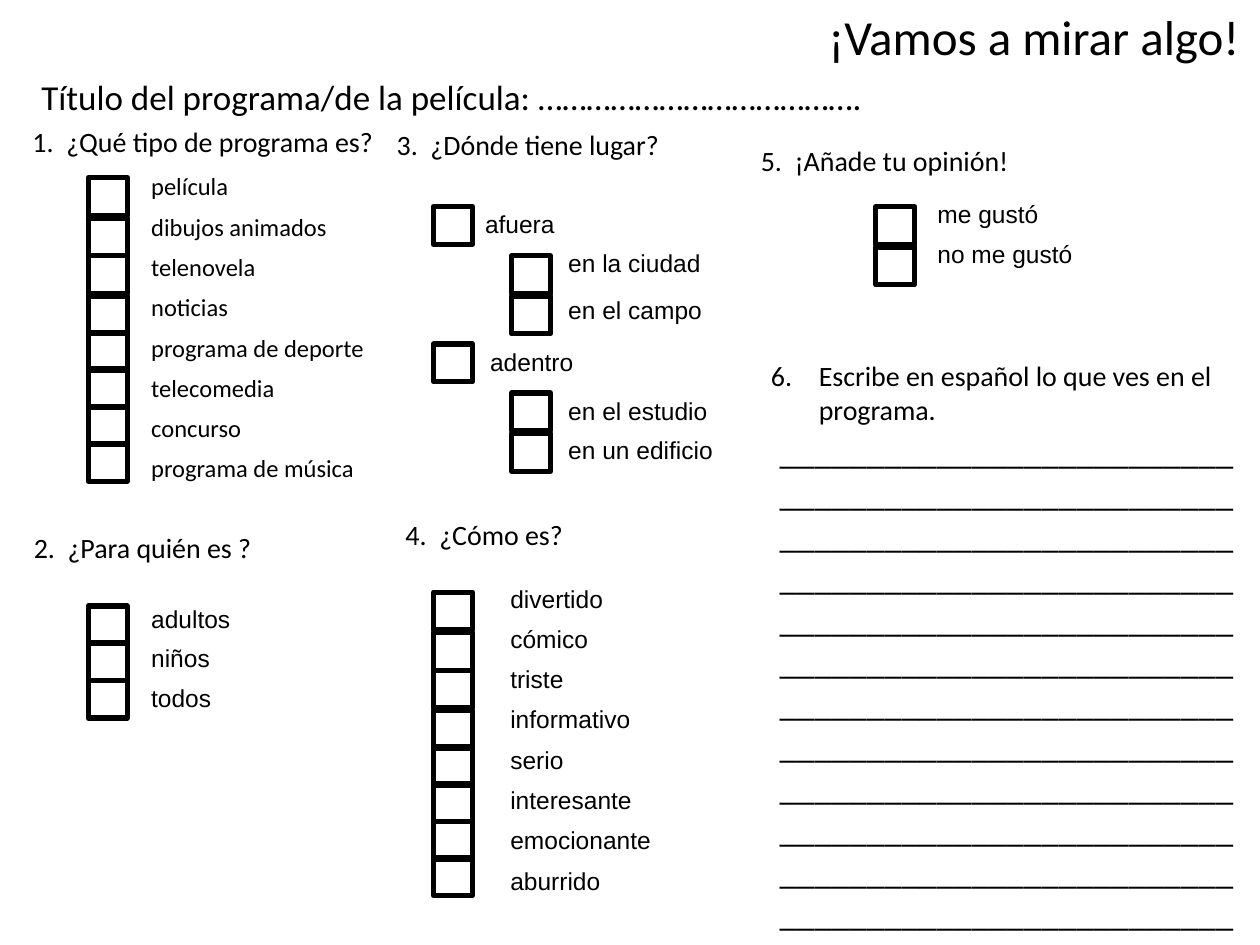
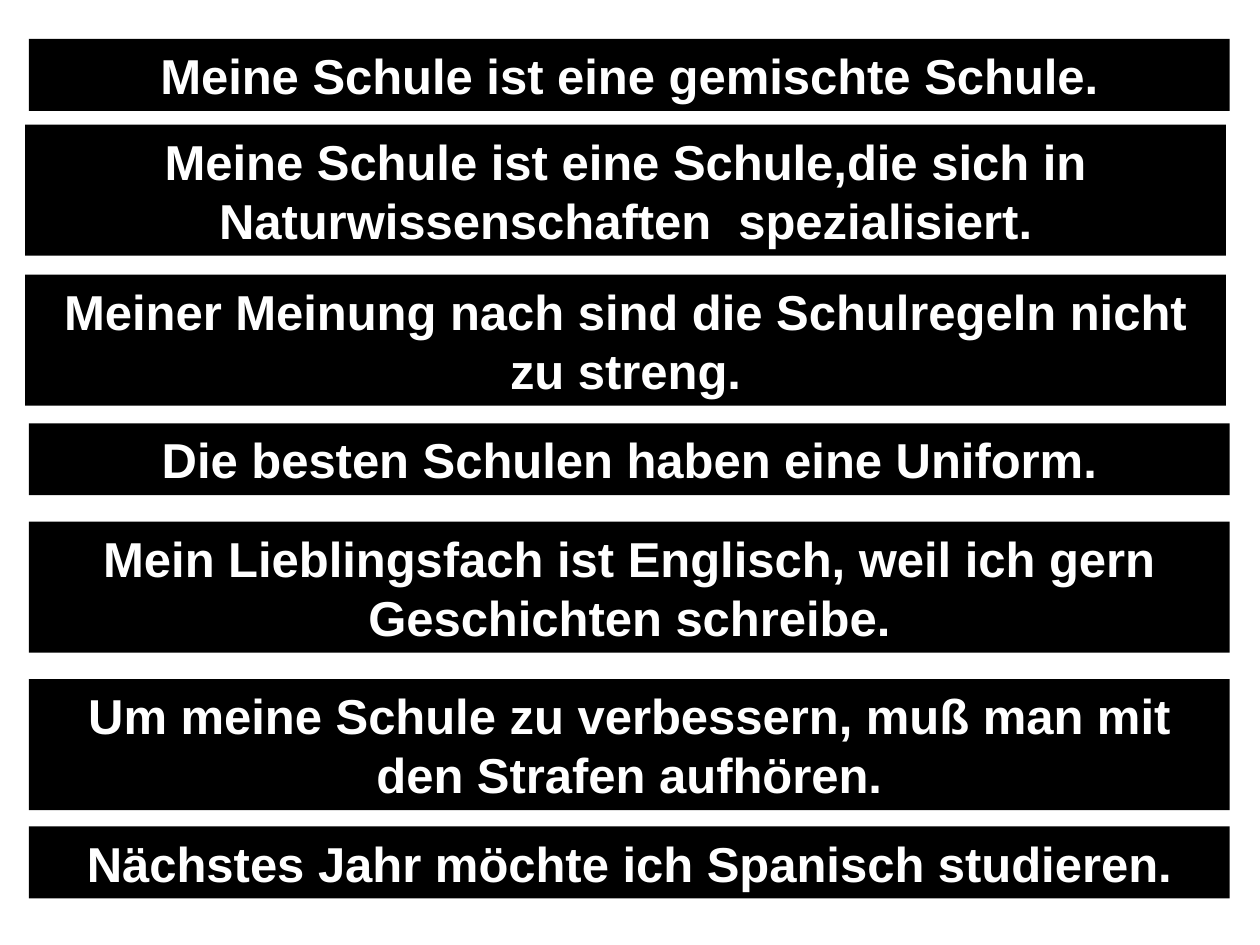
from pptx import Presentation
from pptx.dml.color import RGBColor
from pptx.enum.shapes import MSO_SHAPE as Shape
from pptx.enum.text import MSO_ANCHOR as Anchor, PP_ALIGN as Align
from pptx.oxml.xmlchemy import OxmlElement as Element
from pptx.util import Inches, Pt

BLACK = RGBColor(0, 0, 0)
WHITE = RGBColor(255, 255, 255)

# Tops of the tick boxes in a list, measured from the first one
STEPS = (0, 0.32, 0.62, 0.94, 1.23, 1.52, 1.82, 2.11)
TIGHT = (0, 0.29, 0.59)


class Deck:
    """Holds the shared style and the current slide."""

    serif = "Calibri"
    sans = "Arial"

    def __init__(self):
        self.prs = Presentation()
        self.prs.slide_width = Inches(10)
        self.prs.slide_height = Inches(7.5)

    def page(self):
        self.slide = self.prs.slides.add_slide(self.prs.slide_layouts[6])
        self.shapes = self.slide.shapes

    def style(self, para, face, size, color=BLACK, bold=False):
        font = para.font
        font.name, font.size, font.bold = face, Pt(size), bold
        font.color.rgb = color

    def text(self, words, left, top, width, height=0.37, size=16):
        box = self.shapes.add_textbox(*map(Inches, (left, top, width, height)))
        box.text_frame.word_wrap = True
        para = box.text_frame.paragraphs[0]
        para.text = words
        self.style(para, self.serif, size)
        return para

    def number(self, para, start, indent):
        props = para._p.get_or_add_pPr()
        props.set("marL", str(Inches(indent)))
        props.set("indent", str(-Inches(indent)))
        mark = Element("a:buAutoNum")
        mark.set("type", "arabicPeriod")
        mark.set("startAt", str(start))
        props.insert_element_before(mark, "a:tabLst", "a:defRPr", "a:extLst")

    def rect(self, left, top, width, height):
        shape = self.shapes.add_shape(
            Shape.RECTANGLE, *map(Inches, (left, top, width, height)))
        shape.shadow.inherit = False
        return shape

    def tick(self, left, top):
        box = self.rect(left, top, 0.31, 0.3)
        box.fill.background()
        box.line.color.rgb = BLACK
        box.line.width = Pt(3)

    def table(self, words, left, top, widths, row, face):
        frame = self.shapes.add_table(
            len(words), 2, Inches(left), Inches(top),
            Inches(sum(widths)), Inches(row * len(words)))
        grid = frame.table
        grid.first_row = grid.horz_banding = False
        for col, width in zip(grid.columns, widths):
            col.width = Inches(width)
        for i, word in enumerate(words):
            grid.rows[i].height = Inches(row)
            blank, cell = grid.cell(i, 0), grid.cell(i, 1)
            for part, pad in ((blank, 0), (cell, 0.04)):
                part.fill.background()
                part.margin_top = part.margin_bottom = Inches(pad)
                part.margin_left = part.margin_right = Inches(0.13)
                part.vertical_anchor = Anchor.TOP
            cell.text = word
            for part in (blank, cell):
                self.style(part.text_frame.paragraphs[0], face, 14)

    def choice(self, words, spot, widths, row, first, steps=STEPS, face=sans):
        """A list of answers with a tick box before each."""
        self.table(words, *spot, widths, row, face)
        left, top = first
        for _, step in zip(words, steps):
            self.tick(left, top + step)

    def bar(self, words, left, top, height):
        shape = self.rect(left, top, 9.53, height)
        shape.fill.solid()
        shape.fill.fore_color.rgb = BLACK
        shape.line.fill.background()
        shape.text_frame.word_wrap = True
        para = shape.text_frame.paragraphs[0]
        para.text = words
        para.alignment = Align.CENTER
        self.style(para, self.sans, 28, WHITE, True)


def survey(deck):
    deck.page()
    # Title and film name
    title = deck.text("¡Vamos a mirar algo!", 6.41, 0, 3.59, 0.57, 28)
    title.alignment = Align.CENTER
    deck.text("Título del programa/de la película: ………………………………….",
              0.23, 0.55, 7.66, 0.4, 20)

    # Questions
    for words, left, top, width in (
            ("1.  ¿Qué tipo de programa es?", 0.16, 0.94, 3.83),
            ("2.  ¿Para quién es ?", 0.17, 4.16, 2.8),
            ("3.  ¿Dónde tiene lugar?", 3.05, 0.96, 2.8),
            ("4.  ¿Cómo es?", 3.12, 4.06, 2.8),
            ("5.  ¡Añade tu opinión!", 5.94, 1.09, 4)):
        deck.text(words, left, top, width)

    # Kind of programme and audience
    deck.choice(("película", "dibujos animados", "telenovela", "noticias",
                 "programa de deporte", "telecomedia", "concurso",
                 "programa de música"),
                (0.59, 1.33), (0.48, 2.14), 0.32, (0.7, 1.41),
                face=deck.serif)
    deck.choice(("adultos", "niños", "todos"),
                (0.76, 4.77), (0.31, 3.15), 0.31, (0.7, 4.81), TIGHT)

    # Place
    deck.choice(("afuera",), (3.36, 1.64), (0.36, 1.67), 0.31, (3.44, 1.64))
    deck.choice(("en la ciudad", "en el campo"),
                (3.99, 1.95), (0.39, 1.79), 0.37, (4.06, 2.03))
    deck.choice(("adentro",), (3.39, 2.73), (0.37, 1.71), 0.34, (3.44, 2.73))
    deck.choice(("en el estudio", "en un edificio"),
                (3.99, 3.12), (0.39, 1.79), 0.31, (4.06, 3.12))

    # Mood and opinion
    deck.choice(("divertido", "cómico", "triste", "informativo", "serio",
                 "interesante", "emocionante", "aburrido"),
                (3.44, 4.61), (0.48, 2.1), 0.32, (3.44, 4.7))
    deck.choice(("me gustó", "no me gustó"),
                (6.8, 1.56), (0.51, 2.31), 0.31, (6.95, 1.64))

    # Writing task: twelve lines of 26 strokes
    task = deck.text("Escribe en español lo que ves en el programa.",
                     6.02, 2.8, 3.91, 0.64)
    deck.number(task, 6, 0.38)
    deck.text("_" * 26 * 12, 6.09, 3.36, 3.84, 4.1, 20)


def school(deck):
    deck.page()
    one, two = 0.57, 1.04
    for words, left, top, height in (
            ("Meine Schule ist eine gemischte Schule.", 0.23, 0.31, one),
            ("Meine Schule ist eine Schule,die sich in "
             "Naturwissenschaften  spezialisiert.", 0.2, 0.99, two),
            ("Meiner Meinung nach sind die Schulregeln nicht zu streng.",
             0.2, 2.18, two),
            ("Die besten Schulen haben eine Uniform.", 0.23, 3.36, one),
            ("Mein Lieblingsfach ist Englisch, weil ich gern "
             "Geschichten schreibe.", 0.23, 4.14, two),
            ("Um meine Schule zu verbessern, muß man mit den Strafen "
             "aufhören.", 0.23, 5.39, two),
            ("Nächstes Jahr möchte ich Spanisch studieren.",
             0.23, 6.56, one)):
        deck.bar(words, left, top, height)


def main():
    deck = Deck()
    survey(deck)
    school(deck)
    deck.prs.save("out.pptx")


if __name__ == "__main__":
    main()
